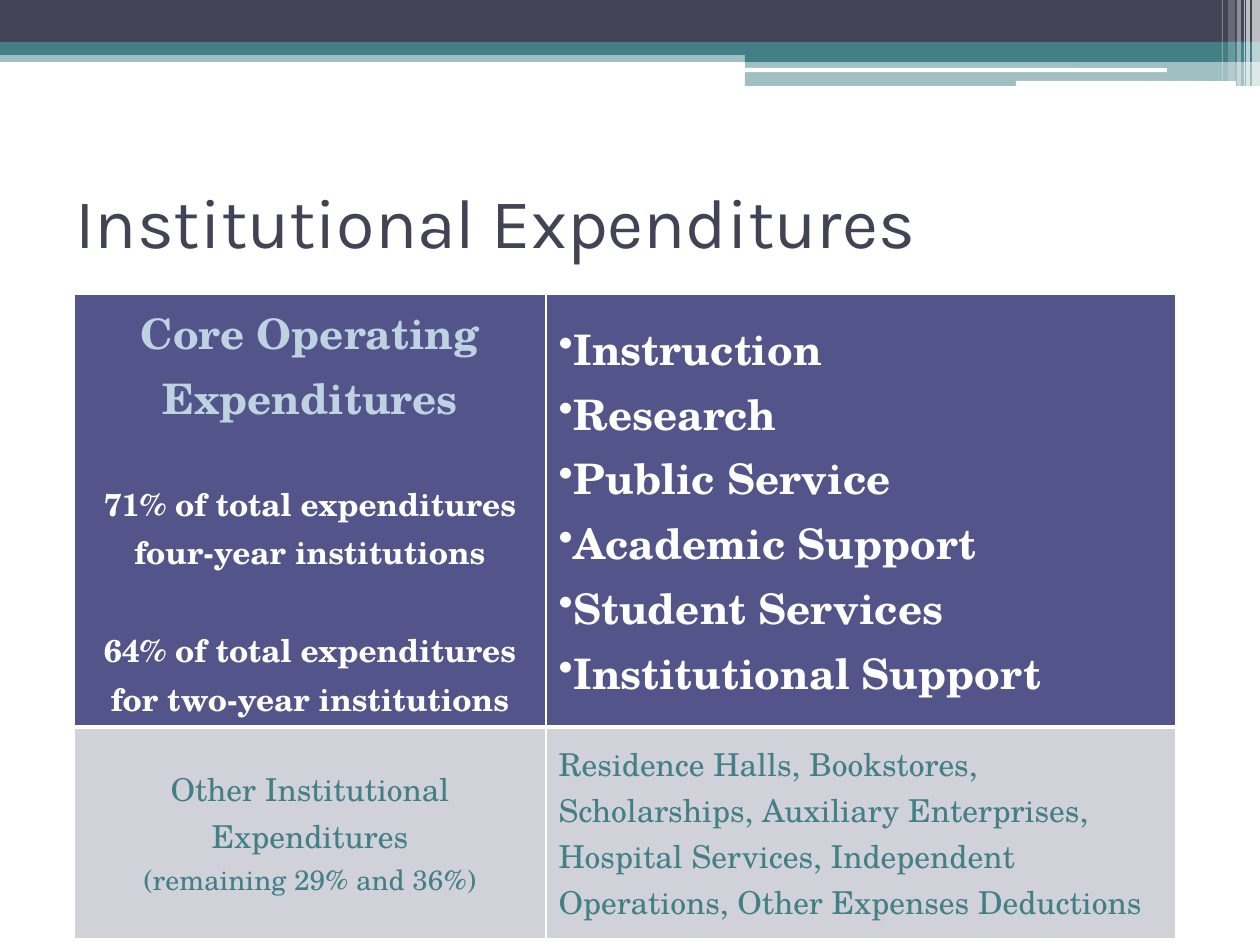
from lxml.etree import SubElement
from pptx import Presentation
from pptx.dml.color import RGBColor as RGB
from pptx.enum.shapes import MSO_SHAPE as Kind
from pptx.enum.text import MSO_ANCHOR as Anchor, PP_ALIGN as Align
from pptx.oxml import parse_xml
from pptx.oxml.ns import nsdecls, qn
from pptx.util import Pt

SCALE = 914400 / 126  # EMU in one px
INK = RGB(0x42, 0x44, 0x56)
TEAL = RGB(0x43, 0x80, 0x86)
WHITE = RGB(0xFF, 0xFF, 0xFF)
INDIGO = RGB(0x53, 0x54, 0x8A)
PALE = RGB(0xBE, 0xD3, 0xE1)
GREY = RGB(0xD1, 0xD1, 0xDA)
SANS, SERIF = "Karla", "TeX Gyre Schola"


def px(n):
    return round(n * SCALE)


def add_bar(slide, box, color, alpha=100, kind=Kind.RECTANGLE):
    bar = slide.shapes.add_shape(kind, *map(px, box))
    bar.shadow.inherit = False
    bar.line.fill.background()
    bar.fill.solid()
    bar.fill.fore_color.rgb = color
    if alpha < 100:
        tint = bar.fill._xPr.find(qn("a:solidFill"))[0]
        SubElement(tint, qn("a:alpha"), val=str(alpha * 1000))


def add_band(slide, box):
    x, y, w, h = box
    step = x + 745
    right = x + w
    # Full-width bars
    add_bar(slide, (x, y + 50, w, 12), TEAL, 50)
    add_bar(slide, (x, y, w, 43), INK)
    add_bar(slide, (x, y + 42, w, 13), TEAL)
    # Lower step on the right
    add_bar(slide, (step, y + 49, right - step, 13), TEAL)
    add_bar(slide, (step, y + 61, right - step, 25), TEAL, 50)
    add_bar(slide, (step, y + 68, 422, 4), WHITE, kind=Kind.ROUNDED_RECTANGLE)
    add_bar(slide, (x + 1016, y + 81, 220, 5), WHITE, kind=Kind.ROUNDED_RECTANGLE)
    # Upright stripes: distance from right edge, width, height, alpha
    for gap, wide, high, alpha in (
        (8, 8, h, 65), (14, 4, h, 65), (16, 1, h, 60),
        (23, 4, h, 40), (32, 7, h - 5, 20), (38, 1, h - 5, 30),
    ):
        add_bar(slide, (right - gap, y, wide, high), WHITE, alpha)


def set_font(par, size, color, bold=False, face=SERIF):
    font = par.font
    font.name, font.size, font.bold = face, Pt(size), bold
    font.color.rgb = color


def add_title(slide, box, text):
    frame = slide.shapes.add_textbox(*map(px, box)).text_frame
    frame.word_wrap = True
    frame.vertical_anchor = Anchor.MIDDLE
    par = frame.paragraphs[0]
    par.text = text
    set_font(par, 40, INK, face=SANS)


def set_edges(cell, top, bottom):
    props = cell._tc.get_or_add_tcPr()
    edges = (("L", 1), ("R", 1), ("T", top), ("B", bottom))
    for i, (side, width) in enumerate(edges):
        props.insert(i, parse_xml(
            f'<a:ln{side} {nsdecls("a")} w="{Pt(width)}"><a:solidFill>'
            f'<a:srgbClr val="{WHITE}"/></a:solidFill></a:ln{side}>'))


def fill_cell(cell, fill, lines, align, bold, bullet=False):
    """Each line is text, size, color, space before."""
    cell.fill.solid()
    cell.fill.fore_color.rgb = fill
    cell.vertical_anchor = Anchor.MIDDLE
    frame = cell.text_frame
    for i, (text, size, color, gap) in enumerate(lines):
        par = frame.add_paragraph() if i else frame.paragraphs[0]
        par.text = text
        par.alignment = align
        par.space_before = Pt(gap)
        set_font(par, size, color, bold)
        if bullet:
            props = par._p.get_or_add_pPr()
            props.set("marL", "0")
            props.set("indent", "0")
            mark = parse_xml(f'<a:buChar {nsdecls("a")} char="•"/>')
            props.find(qn("a:defRPr")).addprevious(mark)


def add_grid(slide, box):
    x, y, w, h = box
    table = slide.shapes.add_table(2, 2, *map(px, box)).table
    for col, wide in zip(table.columns, (472, w - 472)):
        col.width = px(wide)
    for row, high in zip(table.rows, (433, h - 433)):
        row.height = px(high)

    # Core spending
    core, uses = table.rows[0].cells
    fill_cell(core, INDIGO, [
        ("Core Operating Expenditures", 24, PALE, 0),
        ("71% of total expenditures four-year institutions", 18, WHITE, 28),
        ("64% of total expenditures for two-year institutions", 18, WHITE, 28),
    ], Align.CENTER, True)
    core.vertical_anchor = Anchor.TOP
    names = ("Instruction", "Research", "Public Service", "Academic Support",
             "Student Services", "Institutional Support")
    fill_cell(uses, INDIGO, [(name, 24, WHITE, 0) for name in names],
              Align.LEFT, True, bullet=True)

    # Other spending
    other, items = table.rows[1].cells
    fill_cell(other, GREY, [
        ("Other Institutional Expenditures", 18, TEAL, 0),
        ("(remaining 29% and 36%)", 16, TEAL, 0),
    ], Align.CENTER, False)
    fill_cell(items, GREY, [
        ("Residence Halls, Bookstores, Scholarships, Auxiliary Enterprises, "
         "Hospital Services, Independent Operations, Other Expenses Deductions",
         18, TEAL, 0),
    ], Align.LEFT, False)

    for row, (top, bottom) in zip(table.rows, ((1, 3), (3, 1))):
        for cell in row.cells:
            set_edges(cell, top, bottom)


def main():
    deck = Presentation()
    deck.slide_width, deck.slide_height = px(1260), px(945)
    slide = deck.slides.add_slide(deck.slide_layouts[6])
    add_band(slide, (0, 0, 1260, 86))
    add_title(slide, (63, 158, 1134, 126), "Institutional Expenditures")
    add_grid(slide, (74, 294, 1102, 645))
    deck.save("out.pptx")


if __name__ == "__main__":
    main()
